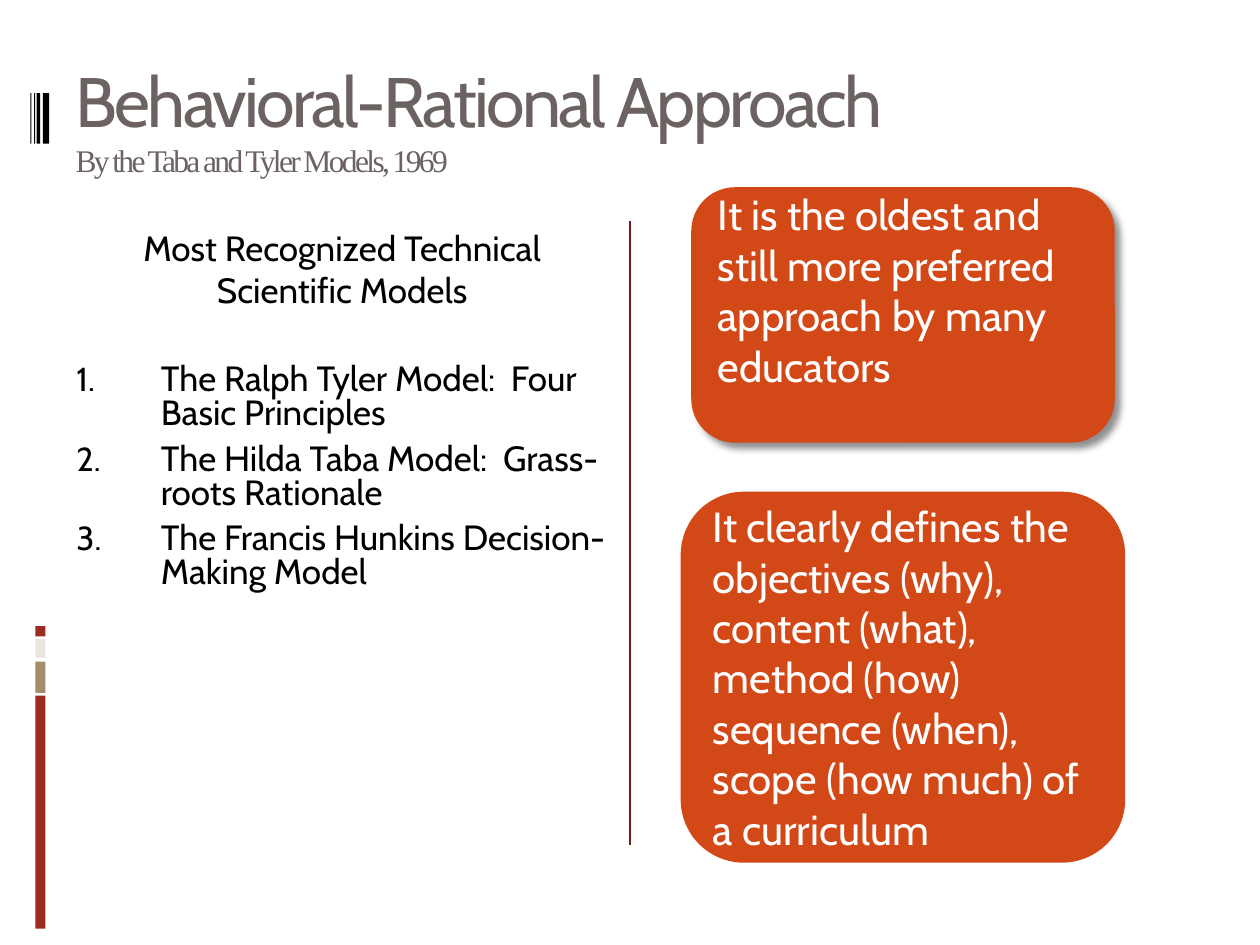
from dataclasses import dataclass

from lxml import etree
from pptx import Presentation
from pptx.dml.color import RGBColor
from pptx.enum.shapes import MSO_CONNECTOR, MSO_SHAPE
from pptx.enum.text import MSO_ANCHOR, MSO_AUTO_SIZE, PP_ALIGN
from pptx.oxml.ns import qn
from pptx.util import Inches, Pt

RECT, ROUND = MSO_SHAPE.RECTANGLE, MSO_SHAPE.ROUNDED_RECTANGLE
LINE = MSO_CONNECTOR.STRAIGHT
LEFT, CENTER = PP_ALIGN.LEFT, PP_ALIGN.CENTER
MIDDLE, FIXED = MSO_ANCHOR.MIDDLE, MSO_AUTO_SIZE.NONE


@dataclass(frozen=True)
class Theme:
    font: str = "Cabin"
    serif: str = "Times New Roman"
    head: str = "6C6262"
    ink: str = "000000"
    white: str = "FFFFFF"
    card: str = "D34817"
    rule: str = "751D12"
    red: str = "9B2D1F"
    tan: str = "A28E6A"
    cream: str = "E9E5DC"
    title: int = 40
    sub: int = 18
    body: int = 20
    note: int = 24


THEME = Theme()

# Grid of 120 columns by 90 rows: one cell is a twelfth of an inch
CELL = Inches(1) / 12

HEADING = ("Behavioral-Rational Approach", "By the Taba and Tyler Models, 1969")
LEAD = ("Most Recognized Technical", "Scientific Models")
MODELS = (
    "The Ralph Tyler Model:  Four Basic Principles",
    "The Hilda Taba Model:  Grass-roots Rationale",
    "The Francis Hunkins Decision-Making Model",
)
OLDEST = "It is the oldest and still more preferred approach by many educators"
CLEAR = ("It clearly defines the objectives (why), content (what), method (how) "
         "sequence (when), scope (how much) of a curriculum")


def grid(*cells):
    return [round(n * CELL) for n in cells]


def style(run, size, color, font=THEME.font):
    run.font.size = Pt(size)
    run.font.name = font
    run.font.color.rgb = RGBColor.from_string(color)


def add_bar(slide, box, color):
    bar = slide.shapes.add_shape(RECT, *grid(*box))
    bar.shadow.inherit = False
    bar.fill.solid()
    bar.fill.fore_color.rgb = RGBColor.from_string(color)
    bar.line.fill.background()


def add_rule(slide, col, top, end):
    rule = slide.shapes.add_connector(LINE, *grid(col, top, col, end))
    rule.line.color.rgb = RGBColor.from_string(THEME.rule)
    rule.line.width = Pt(0.75)
    etree.SubElement(rule.line._get_or_add_ln().getparent(), qn("a:effectLst"))


def set_title(slide):
    title = slide.shapes.title
    title.left, title.top, title.width, title.height = grid(6, 2.75, 108, 17)
    frame = title.text_frame
    frame.auto_size = FIXED
    frame.vertical_anchor = MIDDLE
    para = frame.paragraphs[0]
    para.text = "\v".join(HEADING)
    para.alignment = LEFT
    looks = ((THEME.title, THEME.font), (THEME.sub, THEME.serif))
    for run, (size, font) in zip(para.runs, looks):
        style(run, size, THEME.head, font)
        run.font._element.set("spc", "-150")


def set_number(para):
    props = para._p.get_or_add_pPr()
    props.set("marL", str(Inches(0.67)))
    props.set("indent", str(-Inches(0.67)))
    etree.SubElement(props, qn("a:buSzPct"), val="95000")
    etree.SubElement(props, qn("a:buAutoNum"), type="arabicPeriod")


def add_list(slide):
    frame = slide.shapes.add_textbox(*grid(6.1, 21, 53, 59.4)).text_frame
    frame.word_wrap = True
    frame.text = "\n".join(LEAD + MODELS)
    for n, para in enumerate(frame.paragraphs):
        style(para.runs[0], THEME.body, THEME.ink)
        if n < len(LEAD):
            para.alignment = CENTER
        else:
            # The first model stands one line further from the lead
            para.space_before = Pt(31 if n == len(LEAD) else 7)
            para.line_spacing = 0.8
            set_number(para)


def add_card(slide, box, text):
    card = slide.shapes.add_shape(ROUND, *grid(*box))
    card.shadow.inherit = False
    card.adjustments[0] = 0.167
    card.fill.solid()
    card.fill.fore_color.rgb = RGBColor.from_string(THEME.card)
    card.line.color.rgb = RGBColor.from_string(THEME.card)
    card.line.width = Pt(2)
    frame = card.text_frame
    frame.word_wrap = True
    frame.vertical_anchor = MIDDLE
    frame.text = text
    para = frame.paragraphs[0]
    para.alignment = LEFT
    style(para.runs[0], THEME.note, THEME.white)
    return card


def add_shadow(shape):
    effects = shape._element.spPr.find(qn("a:effectLst"))
    outer = etree.SubElement(
        effects, qn("a:outerShdw"), blurRad=str(Pt(4)), dist=str(Pt(4)),
        dir=str(45 * 60000), algn="tl", rotWithShape="0")
    color = etree.SubElement(outer, qn("a:srgbClr"), val=THEME.ink)
    etree.SubElement(color, qn("a:alpha"), val="43000")


def main():
    deck = Presentation()
    deck.slide_width, deck.slide_height = grid(120, 90)
    slide = deck.slides.add_slide(deck.slide_layouts[5])

    # Colour strip at the lower left: top row, height, colour
    for top, high, color in ((66.24, 22.2, THEME.red), (63, 3, THEME.tan),
                             (60.84, 1.8, THEME.cream), (59.64, 0.96, THEME.red)):
        add_bar(slide, (3.36, top, 0.96, high), color)

    # Black bars beside the title: left column, width
    for col, wide in ((4.08, 0.6), (3.48, 0.36), (3.24, 0.12), (2.88, 0.12)):
        add_bar(slide, (col, 8.88, wide, 4.8), THEME.ink)

    # Title, list and the rule between the columns
    add_rule(slide, 60, 21, 80.5)
    set_title(slide)
    add_list(slide)

    # Cards; the upper one keeps a line free below its text
    upper = add_card(slide, (66, 18, 40, 24), OLDEST)
    upper.text_frame.margin_bottom = Inches(0.45)
    add_shadow(upper)
    add_card(slide, (65, 47, 42, 35), CLEAR)

    deck.save("out.pptx")


if __name__ == "__main__":
    main()
